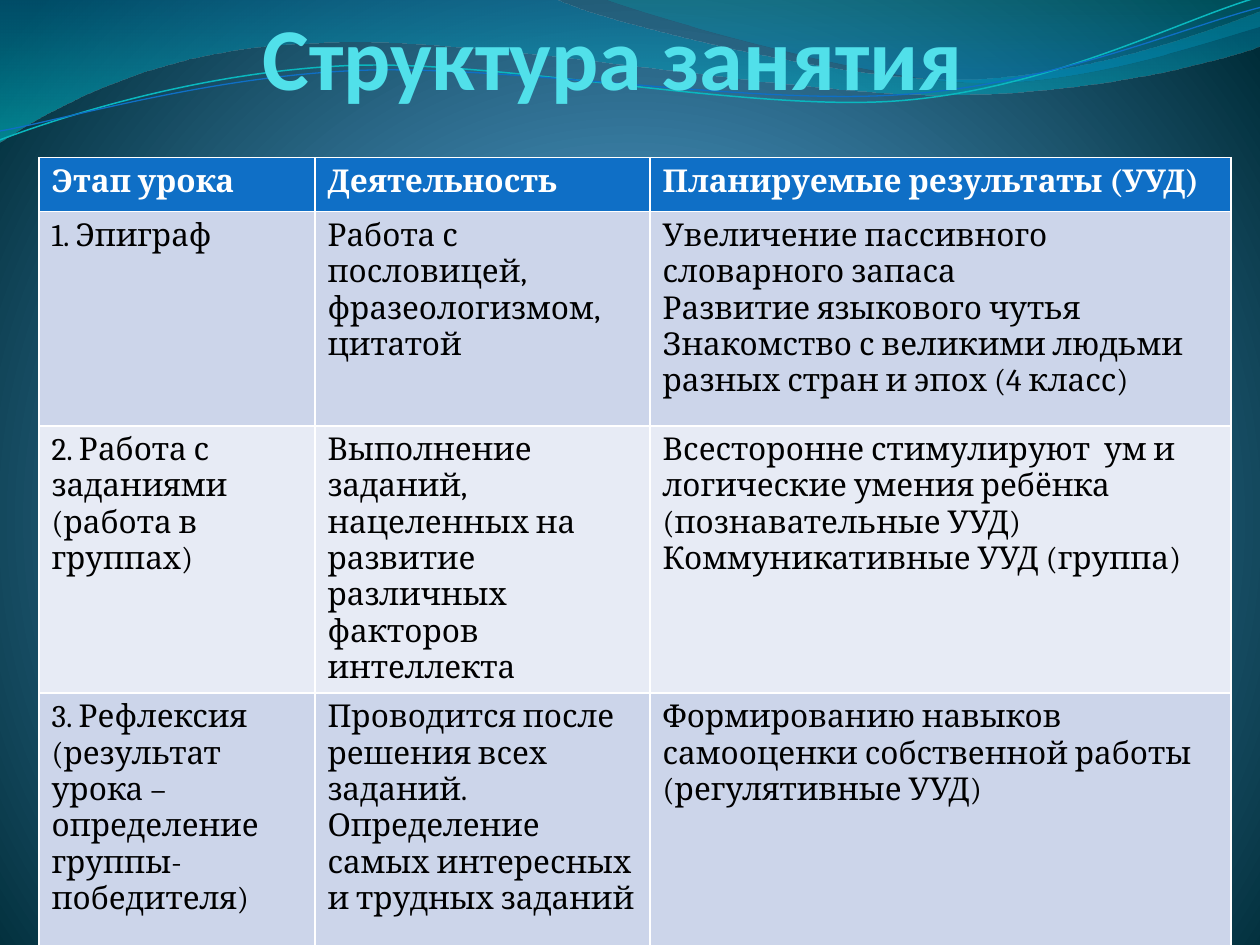
from math import cos, radians, sin

from lxml import etree
from pptx import Presentation
from pptx.dml.color import RGBColor
from pptx.enum import text
from pptx.oxml.ns import qn
from pptx.util import Inches, Pt

DEEP_BLUE = RGBColor(0x00, 0x74, 0xA1)
TURQUOISE = RGBColor(0x00, 0xC6, 0xCF)
TEAL = RGBColor(0x00, 0xA1, 0xA9)
SEA_BLUE = RGBColor(0x00, 0x8B, 0xBF)
CYAN_LINE = RGBColor(0x0A, 0xB8, 0xBF)
ACCENT = RGBColor(0x0F, 0x6F, 0xC6)
TITLE_CYAN = RGBColor(0x51, 0xE0, 0xEA)
BAND_DARK = RGBColor(0xCC, 0xD5, 0xEA)
BAND_LIGHT = RGBColor(0xE7, 0xEB, 0xF5)
WHITE = RGBColor(0xFF, 0xFF, 0xFF)
BLACK = RGBColor(0x00, 0x00, 0x00)
BACKDROP = [(0, RGBColor(0x4A, 0xA0, 0xD6), 100),
            (25, RGBColor(0x4C, 0x98, 0xC7), 100),
            (100, RGBColor(0x00, 0x2C, 0x38), 100)]

# Each wave is a start point, then segments of one point (straight) or three (Bezier).
WIDE_WAVE = [[(0, 0)], [(4.4, -0.01)],
             [(4.76, 0.17), (6.64, 0.63), (7.58, 0.63)],
             [(8.53, 0.63), (9.58, 0.26), (10, 0.09)], [(10.01, 0.36)],
             [(9.83, 0.44), (8.7, 0.76), (7.46, 0.75)],
             [(6.22, 0.75), (3.82, 0.28), (2.57, 0.34)],
             [(1.29, 0.36), (0.46, 0.83), (-0.01, 1.13)], [(0, 0)]]
RIGHT_WAVE = [[(4.79, -0.01)],
              [(5.09, 0.11), (6.82, 0.62), (7.69, 0.65)],
              [(8.56, 0.69), (9.61, 0.32), (10, 0.21)], [(10, 0)], [(4.79, -0.01)]]
CYAN_CURVE = [[(0, 1.11)],
              [(0.48, 0.93), (1.58, 0.57), (2.77, 0.52)],
              [(3.95, 0.47), (5.93, 0.89), (7.13, 0.8)],
              [(8.33, 0.71), (9.38, 0.15), (9.98, -0.02)]]
BLUE_CURVE = [[(0, 1.04)],
              [(0.47, 0.96), (1.64, 0.61), (2.83, 0.56)],
              [(4.03, 0.51), (5.97, 0.84), (7.17, 0.75)],
              [(8.36, 0.67), (9.41, 0.21), (10, 0.06)]]
CURVE_ROTATION = 357.3

COLUMN_WIDTHS = [2.19, 2.66, 4.61]
ROW_HEIGHTS = [0.43, 1.7, 1.7, 2.02]
STAGES = [
    [["Этап урока"], ["Деятельность"], ["Планируемые результаты (УУД)"]],
    [["1. Эпиграф"],
     ["Работа с пословицей, фразеологизмом, цитатой"],
     ["Увеличение пассивного словарного запаса",
      "Развитие языкового чутья",
      "Знакомство с великими людьми разных стран и эпох (4 класс)"]],
    [["2. Работа с заданиями", "(работа в группах)"],
     ["Выполнение заданий, нацеленных на развитие различных факторов интеллекта"],
     ["Всесторонне стимулируют  ум и логические умения ребёнка (познавательные УУД)",
      "Коммуникативные УУД (группа)"]],
    [["3. Рефлексия (результат урока – определение группы-победителя)"],
     ["Проводится после решения всех заданий.",
      "Определение самых интересных и трудных заданий"],
     ["Формированию навыков самооценки собственной работы (регулятивные УУД)"]],
]


def add_child(parent, tag, **attributes):
    return etree.SubElement(parent, qn(tag), {k: str(v) for k, v in attributes.items()})


def set_gradient(owner, fill, stops):
    """Give fill the (position, colour, opacity) stops; return its element for a direction."""
    fill.gradient()
    gradient = owner.find(".//" + qn("a:gradFill"))
    for child in list(gradient):
        gradient.remove(child)
    stop_list = add_child(gradient, "a:gsLst")
    for position, colour, opacity in stops:
        stop = add_child(stop_list, "a:gs", pos=position * 1000)
        shade = add_child(stop, "a:srgbClr", val=colour)
        if opacity < 100:
            add_child(shade, "a:alpha", val=opacity * 1000)
    return gradient


def paint_background(slide):
    gradient = set_gradient(slide.element, slide.background.fill, BACKDROP)
    circle = add_child(gradient, "a:path", path="circle")
    add_child(circle, "a:fillToRect", l=10000, t=110000, r=10000, b=100000)


def turn(outline, degrees, pivot):
    c, s = cos(radians(degrees)), sin(radians(degrees))
    px, py = pivot
    return [[(px + (x - px) * c - (y - py) * s, py + (x - px) * s + (y - py) * c)
             for x, y in segment] for segment in outline]


def add_outline(slide, left, top, outline, close):
    """Draw the outline, joining each group of three points into one Bezier segment."""
    points = [(Inches(left + x), Inches(top + y)) for segment in outline for x, y in segment]
    builder = slide.shapes.build_freeform(*points[0])
    builder.add_line_segments(points[1:], close=close)
    shape = builder.convert_to_shape()
    shape.shadow.inherit = False
    lines = iter(list(shape._element.iter(qn("a:lnTo"))))
    for segment in outline[1:]:
        steps = [next(lines) for _ in segment]
        if len(steps) == 3:
            steps[0].addprevious(bezier := etree.Element(qn("a:cubicBezTo")))
            for step in steps:
                bezier.append(step[0])
                step.getparent().remove(step)
    return shape


def add_waves(slide, left, top):
    for outline, stops in [
        (WIDE_WAVE, [(0, DEEP_BLUE, 45), (100, TURQUOISE, 55)]),
        (RIGHT_WAVE, [(0, TEAL, 30), (80, SEA_BLUE, 45)]),
    ]:
        wave = add_outline(slide, left, top, outline, True)
        wave.line.fill.background()
        gradient = set_gradient(wave._element.spPr, wave.fill, stops)
        add_child(gradient, "a:lin", ang=90 * 60000, scaled=0)
    for outline, pivot, colour, width in [
        (CYAN_CURVE, (4.99, 0.58), CYAN_LINE, 0.85),
        (BLUE_CURVE, (5, 0.59), ACCENT, 0.75),
    ]:
        level = turn(outline, -CURVE_ROTATION, pivot)
        curve = add_outline(slide, left, top, level, False)
        curve.rotation = CURVE_ROTATION
        curve.fill.background()
        curve.line.color.rgb = colour
        curve.line.width = Pt(width)


def style_run(run, font, size, colour, bold):
    run.font.name = font
    run.font.size = Pt(size)
    run.font.color.rgb = colour
    run.font.bold = bold


def place_title(slide, left, top, width, height):
    title = slide.shapes.title
    title.left, title.top = Inches(left), Inches(top)
    title.width, title.height = Inches(width), Inches(height)
    frame = title.text_frame
    frame.auto_size = text.MSO_AUTO_SIZE.NONE
    frame.word_wrap = True
    frame.vertical_anchor = text.MSO_ANCHOR.BOTTOM
    frame.margin_left = frame.margin_top = frame.margin_bottom = 0
    frame.margin_right = Inches(0.02)
    paragraph = frame.paragraphs[0]
    paragraph.alignment = text.PP_ALIGN.CENTER
    run = paragraph.add_run()
    run.text = "Структура занятия"
    style_run(run, "Calibri", 50.4, TITLE_CYAN, True)
    slide.shapes._spTree.append(title._element)  # in front of the waves


def fill_cell(cell, paragraphs, row):
    header = row == 0
    cell.fill.solid()
    cell.fill.fore_color.rgb = ACCENT if header else BAND_DARK if row % 2 else BAND_LIGHT
    frame = cell.text_frame
    for index, wording in enumerate(paragraphs):
        paragraph = frame.add_paragraph() if index else frame.paragraphs[0]
        run = paragraph.add_run()
        run.text = wording
        style_run(run, "Cambria", 18, WHITE if header else BLACK, header)


def add_stage_table(slide, left, top):
    """Add the table; its default style draws the white cell borders."""
    table = slide.shapes.add_table(
        len(ROW_HEIGHTS), len(COLUMN_WIDTHS), Inches(left), Inches(top),
        Inches(sum(COLUMN_WIDTHS)), Inches(sum(ROW_HEIGHTS))).table
    for column, width in zip(table.columns, COLUMN_WIDTHS):
        column.width = Inches(width)
    for row, height in enumerate(ROW_HEIGHTS):
        table.rows[row].height = Inches(height)
        for column, paragraphs in enumerate(STAGES[row]):
            fill_cell(table.cell(row, column), paragraphs, row)


def main():
    deck = Presentation()
    deck.slide_width, deck.slide_height = Inches(10), Inches(7.5)
    slide = deck.slides.add_slide(deck.slide_layouts[5])
    paint_background(slide)
    add_waves(slide, 0, 0)
    place_title(slide, 0.58, 0, 8.59, 0.86)
    add_stage_table(slide, 0.31, 1.25)
    deck.save("out.pptx")


if __name__ == "__main__":
    main()
